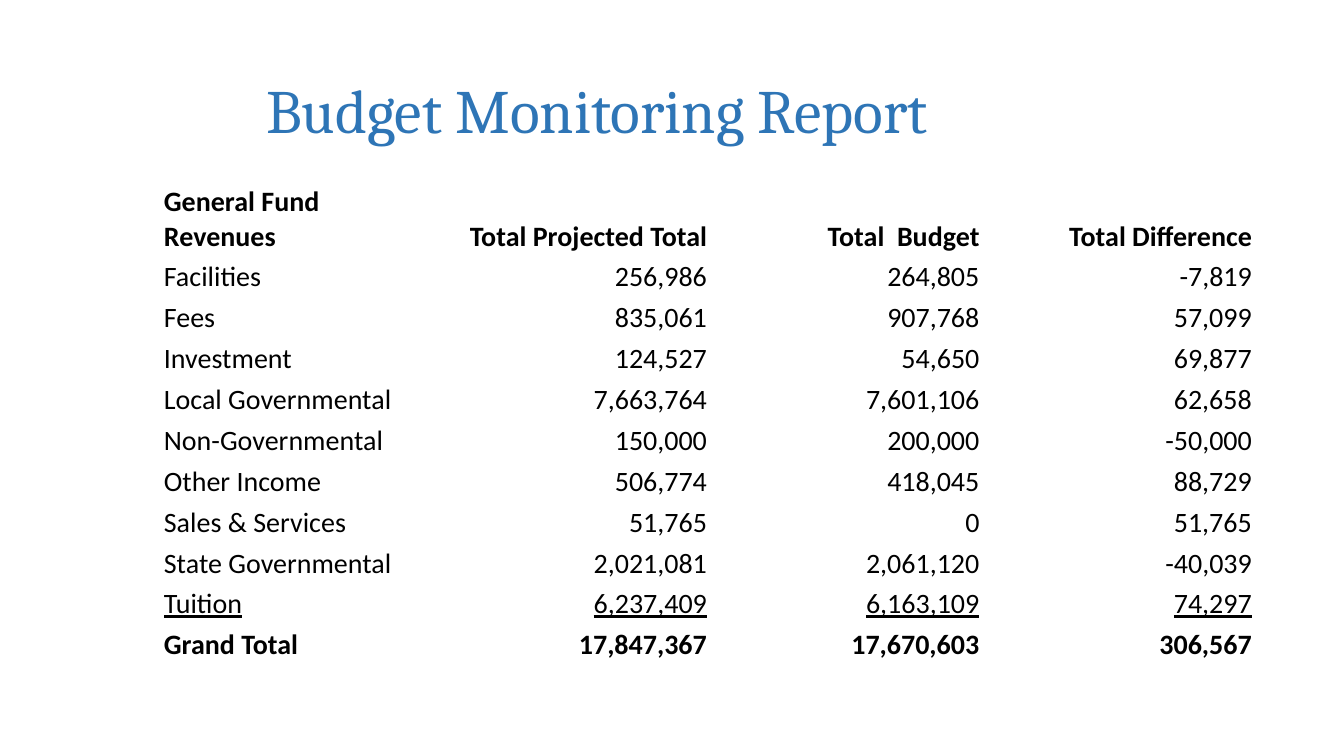
"""Build the Budget Monitoring Report slide with its revenue table."""
from pptx import Presentation
from pptx.dml.color import RGBColor
from pptx.enum.text import MSO_ANCHOR as Anchor, PP_ALIGN as Align
from pptx.util import Cm, Pt

COLORS = {"title": "2E75B6", "text": "000000"}
REVENUES = [
    ("General Fund Revenues", "Total Projected Total", "Total  Budget", "Total Difference"),
    ("Facilities", "256,986", "264,805", "-7,819"),
    ("Fees", "835,061", "907,768", "57,099"),
    ("Investment", "124,527", "54,650", "69,877"),
    ("Local Governmental", "7,663,764", "7,601,106", "62,658"),
    ("Non-Governmental", "150,000", "200,000", "-50,000"),
    ("Other Income", "506,774", "418,045", "88,729"),
    ("Sales & Services", "51,765", "0", "51,765"),
    ("State Governmental", "2,021,081", "2,061,120", "-40,039"),
    ("Tuition", "6,237,409", "6,163,109", "74,297"),
    ("Grand Total", "17,847,367", "17,670,603", "306,567"),
]


def style_font(font, face, size, color):
    font.name = face
    font.size = Pt(size)
    font.color.rgb = RGBColor.from_string(COLORS[color])


prs = Presentation()
prs.slide_width, prs.slide_height = Cm(33.87), Cm(19.05)
slide = prs.slides.add_slide(prs.slide_layouts[5])

title = slide.shapes.title
title.left, title.top, title.width, title.height = Cm(6.45), Cm(1.02), Cm(25.1), Cm(3.68)
title.text_frame.text = "Budget Monitoring Report"
title.text_frame.vertical_anchor = Anchor.MIDDLE
heading = title.text_frame.paragraphs[0]
heading.alignment = Align.LEFT
heading.line_spacing = 0.9
style_font(heading.runs[0].font, "Cambria", 44, "title")

last = len(REVENUES) - 1
revenue_table = slide.shapes.add_table(
    len(REVENUES), len(REVENUES[0]), Cm(4.11), Cm(4.14), Cm(27.46), Cm(12.55)
).table
revenue_table.first_row = False
revenue_table.horz_banding = False

for row, entries in enumerate(REVENUES):
    revenue_table.rows[row].height = Cm(2.25 if row == 0 else 1.03)
    for column, entry in enumerate(entries):
        cell = revenue_table.cell(row, column)
        cell.fill.background()
        cell.vertical_anchor = Anchor.BOTTOM
        cell.margin_left = cell.margin_right = cell.margin_top = Cm(0.02)
        cell.margin_bottom = 0
        cell.text_frame.text = entry
        paragraph = cell.text_frame.paragraphs[0]
        paragraph.alignment = Align.RIGHT if column else Align.LEFT
        font = paragraph.runs[0].font
        style_font(font, "Calibri", 20, "text")
        font.bold = row in (0, last)
        font.underline = row == last - 1

prs.save("out.pptx")
